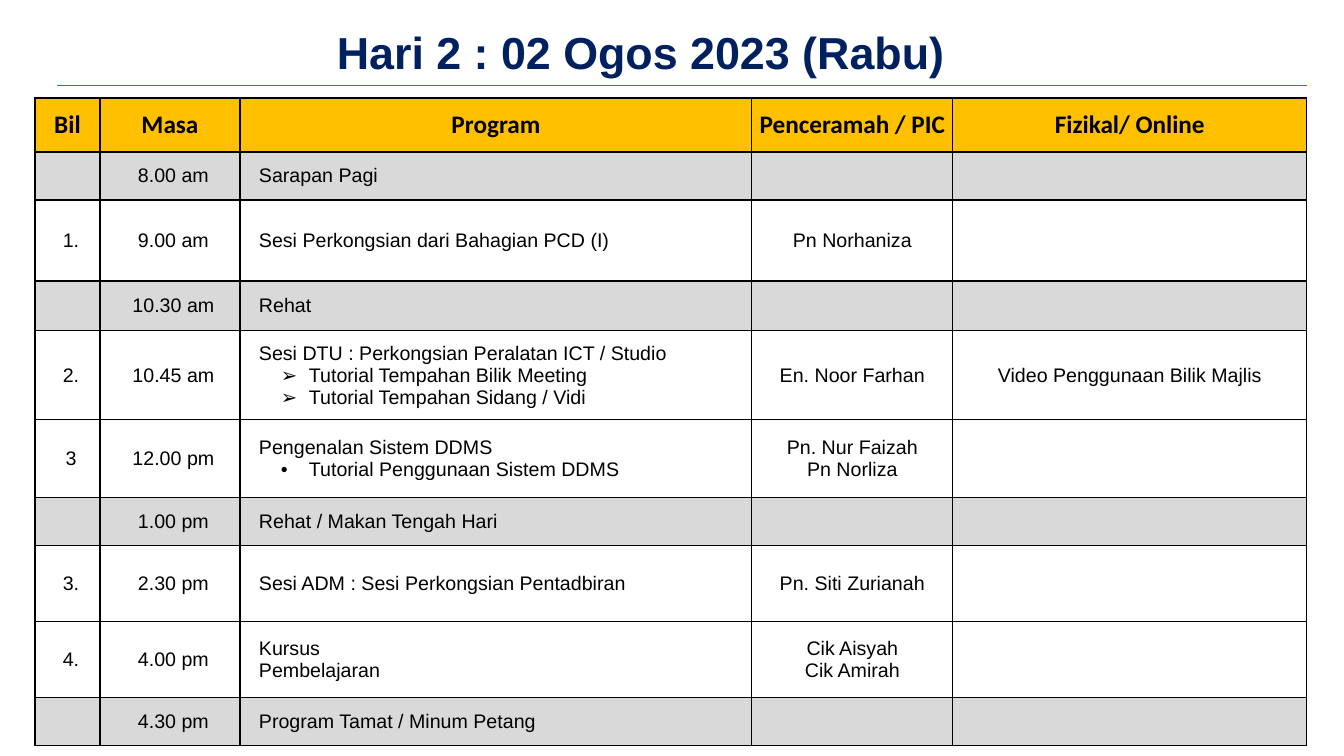
from lxml.etree import SubElement
from pptx import Presentation
from pptx.dml.color import RGBColor
from pptx.enum.shapes import MSO_CONNECTOR
from pptx.enum.text import MSO_ANCHOR, PP_ALIGN
from pptx.oxml.ns import qn
from pptx.util import Pt

EMU_PER_PX = 914400 / 100.8
COLORS = {
    "title": "002060", "rule": "2E75B6", "header": "FFC000",
    "break": "D9D9D9", "session": "FFFFFF", "text": "000000",
}
TITLE_FONT = {"name": "Arial", "size": Pt(32), "bold": True}
HEADER_FONT = {"name": "Calibri", "size": Pt(18), "bold": True}
BODY_FONT = {"name": "Arial", "size": Pt(14), "bold": False}

COLUMN_WIDTHS = [65, 140, 512, 201, 354]
ROW_HEIGHTS = [54, 48, 81, 50, 89, 78, 48, 76, 76, 48]
CELL_INDENTS = [7, 7, 19, 0, 0]
PROGRAM_COLUMN = 2
BULLETS = "➢•"
HEADINGS = ["Bil", "Masa", "Program", "Penceramah / PIC", "Fizikal/ Online"]
SCHEDULE = [
    ["", "8.00 am", "Sarapan Pagi", "", ""],
    ["1.", "9.00 am", "Sesi Perkongsian dari Bahagian PCD (I)", "Pn Norhaniza", ""],
    ["", "10.30 am", "Rehat", "", ""],
    ["2.", "10.45 am",
     "Sesi DTU : Perkongsian Peralatan ICT / Studio\n"
     "➢Tutorial Tempahan Bilik Meeting\n"
     "➢Tutorial Tempahan Sidang / Vidi",
     "En. Noor Farhan", "Video Penggunaan Bilik Majlis"],
    ["3", "12.00 pm", "Pengenalan Sistem DDMS\n•Tutorial Penggunaan Sistem DDMS",
     "Pn. Nur Faizah\nPn Norliza", ""],
    ["", "1.00 pm", "Rehat / Makan Tengah Hari", "", ""],
    ["3.", "2.30 pm", "Sesi ADM : Sesi Perkongsian Pentadbiran", "Pn. Siti Zurianah", ""],
    ["4.", "4.00 pm", "Kursus\nPembelajaran", "Cik Aisyah\nCik Amirah", ""],
    ["", "4.30 pm", "Program Tamat / Minum Petang", "", ""],
]


def px(length):
    return round(length * EMU_PER_PX)


def color(name):
    return RGBColor.from_string(COLORS[name])


def set_attributes(target, values):
    for name, value in values.items():
        setattr(target, name, value)


def format_font(font, values, color_name):
    set_attributes(font, values)
    font.color.rgb = color(color_name)


def add_borders(cell):
    properties = cell._tc.get_or_add_tcPr()
    for position, side in enumerate(["lnL", "lnR", "lnT", "lnB"]):
        line = SubElement(properties, qn(f"a:{side}"), w=str(Pt(1)))
        fill = SubElement(line, qn("a:solidFill"))
        SubElement(fill, qn("a:srgbClr"), val=COLORS["text"])
        properties.insert(position, line)


def indent(paragraph, left, hanging=0, bullet=None):
    properties = paragraph._p.get_or_add_pPr()
    properties.set("marL", str(px(left)))
    properties.set("indent", str(-px(hanging)))
    if bullet:
        SubElement(properties, qn("a:buFont"), typeface="Arial")
        SubElement(properties, qn("a:buChar"), char=bullet)


def fill_cell(cell, text, fill_name, font, alignment, left, margin):
    set_attributes(cell, {
        "vertical_anchor": MSO_ANCHOR.MIDDLE,
        "margin_left": px(margin), "margin_right": px(margin),
        "margin_top": 0, "margin_bottom": 0,
    })
    cell.fill.solid()
    cell.fill.fore_color.rgb = color(fill_name)
    add_borders(cell)
    cell.text = text.replace("➢", "").replace("•", "")
    for paragraph, line in zip(cell.text_frame.paragraphs, text.split("\n")):
        paragraph.alignment = alignment
        format_font(paragraph.font, font, "text")
        for run in paragraph.runs:
            format_font(run.font, font, "text")
        if line and line[0] in BULLETS:
            indent(paragraph, 69, 28, line[0])
        else:
            indent(paragraph, left)


def add_title(slide, left, top, width, height):
    title = slide.shapes.title
    set_attributes(title, {"left": px(left), "top": px(top),
                           "width": px(width), "height": px(height)})
    frame = title.text_frame
    frame.text = "Hari 2 : 02 Ogos 2023 (Rabu)"
    set_attributes(frame, {"vertical_anchor": MSO_ANCHOR.MIDDLE, "word_wrap": True})
    paragraph = frame.paragraphs[0]
    paragraph.alignment = PP_ALIGN.CENTER
    format_font(paragraph.runs[0].font, TITLE_FONT, "title")


def add_rule(slide, left, top, width):
    rule = slide.shapes.add_connector(
        MSO_CONNECTOR.STRAIGHT, px(left), px(top), px(left + width), px(top))
    rule.line.color.rgb = color("rule")
    rule.line.width = Pt(0.5)
    SubElement(rule._element.spPr, qn("a:effectLst"))


def add_schedule(slide, left, top):
    table = slide.shapes.add_table(
        len(ROW_HEIGHTS), len(COLUMN_WIDTHS), px(left), px(top),
        px(sum(COLUMN_WIDTHS)), px(sum(ROW_HEIGHTS))).table
    for column, width in zip(table.columns, COLUMN_WIDTHS):
        column.width = px(width)
    for row, height in zip(table.rows, ROW_HEIGHTS):
        row.height = px(height)

    # Heading row
    for cell, heading in zip(table.rows[0].cells, HEADINGS):
        fill_cell(cell, heading, "header", HEADER_FONT, PP_ALIGN.CENTER, 0, 7)

    # Numbered rows are sessions, the others are breaks
    for row_index, entries in enumerate(SCHEDULE, start=1):
        fill_name = "session" if entries[0] else "break"
        for column_index, text in enumerate(entries):
            is_program = column_index == PROGRAM_COLUMN
            alignment = PP_ALIGN.LEFT if is_program else PP_ALIGN.CENTER
            fill_cell(table.cell(row_index, column_index), text, fill_name,
                      BODY_FONT, alignment, CELL_INDENTS[column_index], 0)


def main():
    presentation = Presentation()
    presentation.slide_width = px(1344)
    presentation.slide_height = px(756)
    slide = presentation.slides.add_slide(presentation.slide_layouts[5])
    add_rule(slide, 57, 85, 1250)
    add_title(slide, 191, 25, 900, 54)
    add_schedule(slide, 35, 98)
    presentation.save("out.pptx")


if __name__ == "__main__":
    main()
